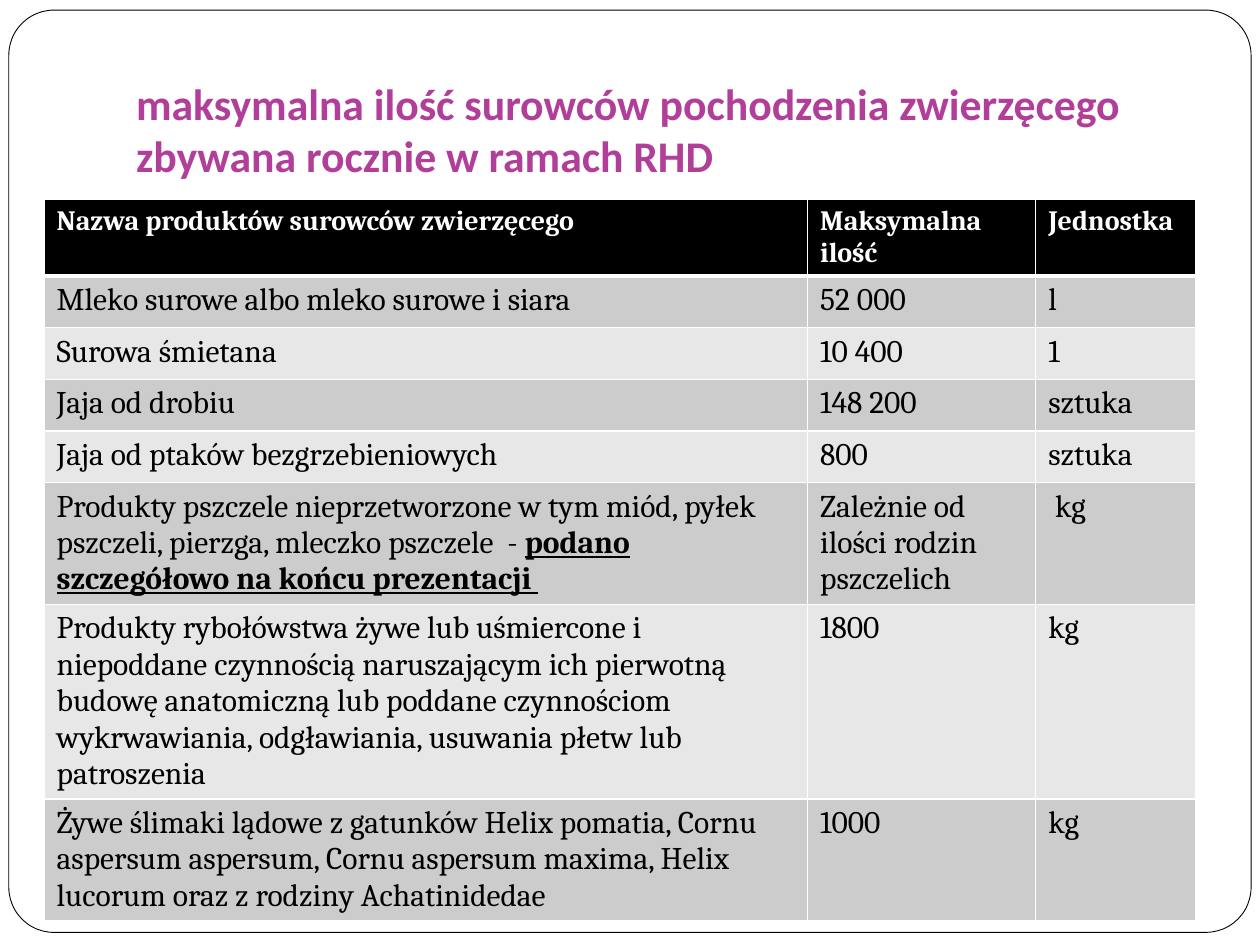
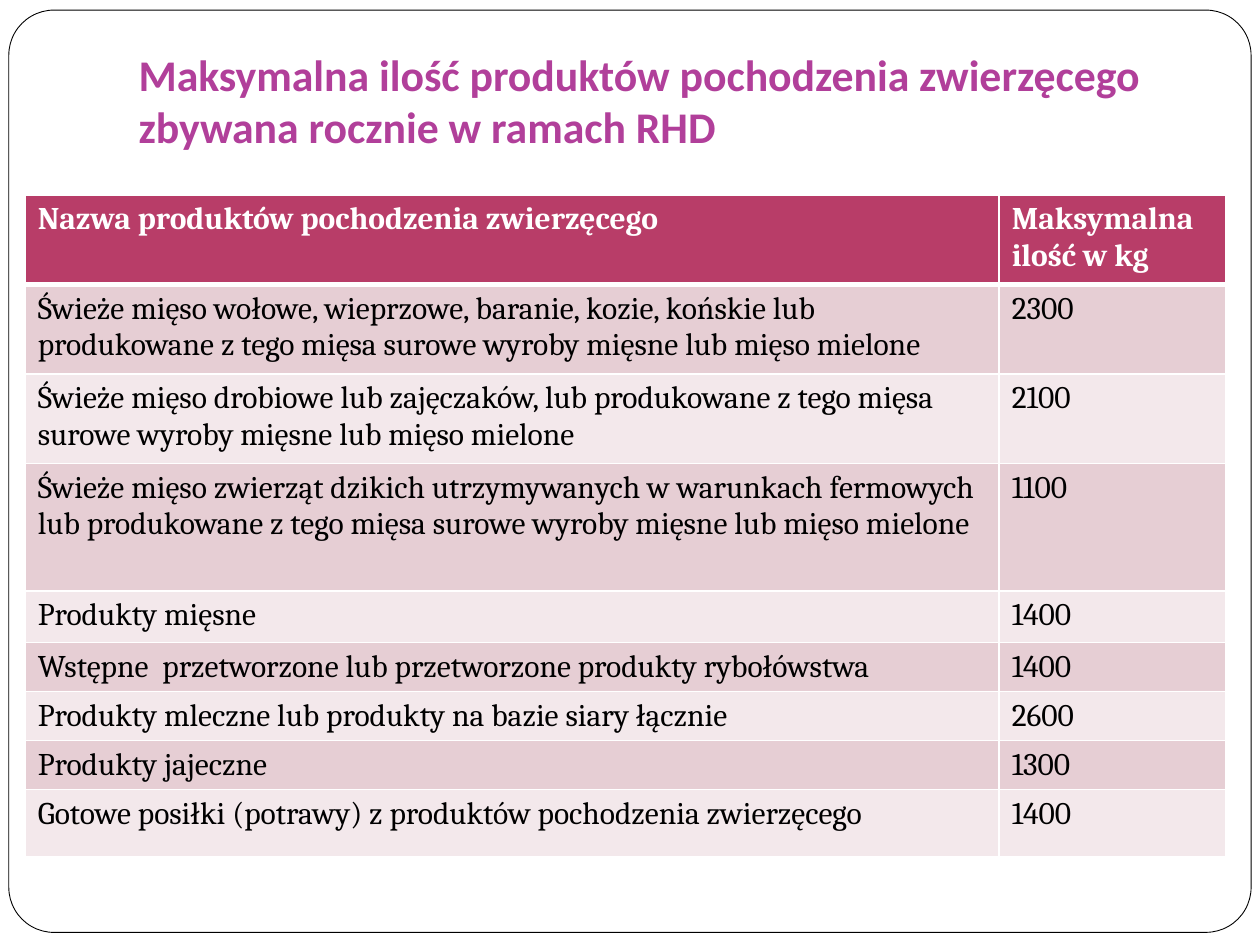
import pptx
import pptx.dml.color
import pptx.enum.shapes
import pptx.enum.text
import pptx.oxml
import pptx.oxml.ns
import pptx.util
from dataclasses import dataclass


@dataclass(frozen=True)
class Theme:
    title_font: str = "Calibri"
    table_font: str = "Cambria"
    title_size: float = 25
    body_size: float = 18
    title: str = "B13F9A"
    ink: str = "000000"
    paper: str = "FFFFFF"
    frame_line: float = 0.5
    rule: float = 1
    header_rule: float = 3


@dataclass(frozen=True)
class Palette:
    header: str
    bands: tuple


THEME = Theme()
GREY = Palette("000000", ("CCCCCC", "E7E7E7"))
PINK = Palette("B83D68", ("E6CED4", "F3E8EB"))
SLIDE_SIZE = (10, 7.5)
FRAME_BOX = (0.07, 0.08, 9.86, 7.32)
FRAME_CORNER = 0.049

# A cell is a string, or a tuple whose second part is emphasised.
SLIDES = [
    {
        "title": "maksymalna ilość surowców pochodzenia zwierzęcego zbywana rocznie w ramach RHD",
        "title_box": (0.98, 0.29, 8.5, 1.25),
        "table_box": (0.35, 1.58, 9.15, 5.86),
        "columns": (6.06, 1.81, 1.27),
        "row_heights": [0.41] * 7 + [0.45],
        "header_size": 16,
        "palette": GREY,
        "rows": [
            ("Nazwa produktów surowców zwierzęcego", "Maksymalna ilość", "Jednostka"),
            ("Mleko surowe albo mleko surowe i siara", "52 000", "l"),
            ("Surowa śmietana", "10 400", "1"),
            ("Jaja od drobiu", "148 200", "sztuka"),
            ("Jaja od ptaków bezgrzebieniowych", "800", "sztuka"),
            (("Produkty pszczele nieprzetworzone w tym miód, pyłek pszczeli, pierzga, "
              "mleczko pszczele  - ", "podano szczegółowo na końcu prezentacji "),
             "Zależnie od ilości rodzin pszczelich", " kg"),
            ("Produkty rybołówstwa żywe lub uśmiercone i niepoddane czynnością "
             "naruszającym ich pierwotną budowę anatomiczną lub poddane czynnościom "
             "wykrwawiania, odgławiania, usuwania płetw lub patroszenia", "1800", "kg"),
            ("Żywe ślimaki lądowe z gatunków Helix pomatia, Cornu aspersum aspersum, "
             "Cornu aspersum maxima, Helix lucorum oraz z rodziny Achatinidedae", "1000", "kg"),
        ],
    },
    {
        "title": "Maksymalna ilość produktów pochodzenia zwierzęcego zbywana rocznie w ramach RHD",
        "title_box": (1, 0.3, 8.5, 1.01),
        "table_box": (0.2, 1.55, 9.53, 5.28),
        "columns": (7.73, 1.8),
        "row_heights": [0.71] * 3 + [1.01, 0.41, 0.39, 0.38, 0.38, 0.53],
        "header_size": 18,
        "palette": PINK,
        "rows": [
            ("Nazwa produktów pochodzenia zwierzęcego", "Maksymalna ilość w kg"),
            ("Świeże mięso wołowe, wieprzowe, baranie, kozie, końskie lub produkowane "
             "z tego mięsa surowe wyroby mięsne lub mięso mielone", "2300"),
            ("Świeże mięso drobiowe lub zajęczaków, lub produkowane z tego mięsa "
             "surowe wyroby mięsne lub mięso mielone", "2100"),
            ("Świeże mięso zwierząt dzikich utrzymywanych w warunkach fermowych lub "
             "produkowane z tego mięsa surowe wyroby mięsne lub mięso mielone", "1100"),
            ("Produkty mięsne", "1400"),
            ("Wstępne  przetworzone lub przetworzone produkty rybołówstwa", "1400"),
            ("Produkty mleczne lub produkty na bazie siary łącznie", "2600"),
            ("Produkty jajeczne", "1300"),
            ("Gotowe posiłki (potrawy) z produktów pochodzenia zwierzęcego", "1400"),
        ],
    },
]


def inches(lengths):
    return [pptx.util.Inches(length) for length in lengths]


def rgb(colour):
    return pptx.dml.color.RGBColor.from_string(colour)


def paint(fill, colour):
    fill.solid()
    fill.fore_color.rgb = rgb(colour)


def add_run(paragraph, text, font, size, colour, bold=False, underline=False):
    run = paragraph.add_run()
    run.text = text
    run.font.name = font
    run.font.size = pptx.util.Pt(size)
    run.font.color.rgb = rgb(colour)
    run.font.bold = bold
    run.font.underline = underline


def add_frame(slide):
    """Draw the rounded page frame and move it to the back of the slide's layout."""
    frame = slide.shapes.add_shape(
        pptx.enum.shapes.MSO_SHAPE.ROUNDED_RECTANGLE, *inches(FRAME_BOX))
    frame.adjustments[0] = FRAME_CORNER
    frame.shadow.inherit = False
    paint(frame.fill, THEME.paper)
    frame.line.color.rgb = rgb(THEME.ink)
    frame.line.width = pptx.util.Pt(THEME.frame_line)
    slide.slide_layout.shapes.element.insert(2, frame.element)


def set_title(slide, text, box):
    title = slide.shapes.title
    title.left, title.top, title.width, title.height = inches(box)
    frame = title.text_frame
    frame.word_wrap = True
    frame.auto_size = pptx.enum.text.MSO_AUTO_SIZE.NONE
    frame.vertical_anchor = pptx.enum.text.MSO_ANCHOR.BOTTOM
    frame.margin_left, frame.margin_top, frame.margin_right, frame.margin_bottom = inches(
        (0.1, 0.05, 0.1, 0.1))
    paragraph = frame.paragraphs[0]
    paragraph.alignment = pptx.enum.text.PP_ALIGN.LEFT
    add_run(paragraph, text, THEME.title_font, THEME.title_size, THEME.title, bold=True)


def set_borders(cell, bottom, top):
    """Rule all four sides; the schema wants the lines ahead of the cell fill."""
    properties = cell._tc.get_or_add_tcPr()
    widths = {"L": THEME.rule, "R": THEME.rule, "T": top, "B": bottom}
    for position, (side, width) in enumerate(widths.items()):
        properties.insert(position, pptx.oxml.parse_xml(
            f'<a:ln{side} {pptx.oxml.ns.nsdecls("a")} w="{pptx.util.Pt(width)}">'
            f'<a:solidFill><a:srgbClr val="{THEME.paper}"/></a:solidFill></a:ln{side}>'))


def fill_cell(cell, content, row, page):
    is_header = row == 0
    palette = page["palette"]
    paint(cell.fill, palette.header if is_header else palette.bands[(row - 1) % 2])
    set_borders(cell,
                bottom=THEME.header_rule if is_header else THEME.rule,
                top=THEME.header_rule if row == 1 else THEME.rule)
    parts = (content,) if isinstance(content, str) else content
    for index, text in enumerate(parts):
        emphasised = index > 0
        add_run(cell.text_frame.paragraphs[0], text, THEME.table_font,
                page["header_size"] if is_header else THEME.body_size,
                THEME.paper if is_header else THEME.ink,
                bold=is_header or emphasised, underline=emphasised)


def add_limits_table(slide, page):
    rows, columns = page["rows"], page["columns"]
    holder = slide.shapes.add_table(len(rows), len(columns), *inches(page["table_box"]))
    limits = holder.table
    for column, width in zip(limits.columns, inches(columns)):
        column.width = width
    for row, height in zip(limits.rows, inches(page["row_heights"])):
        row.height = height
    for row, contents in enumerate(rows):
        for column, content in enumerate(contents):
            fill_cell(limits.cell(row, column), content, row, page)


def main():
    deck = pptx.Presentation()
    deck.slide_width, deck.slide_height = inches(SLIDE_SIZE)
    title_only = deck.slide_layouts[5]
    for number, page in enumerate(SLIDES):
        slide = deck.slides.add_slide(title_only)
        if number == 0:
            add_frame(slide)
        set_title(slide, page["title"], page["title_box"])
        add_limits_table(slide, page)
    deck.save("out.pptx")


if __name__ == "__main__":
    main()
